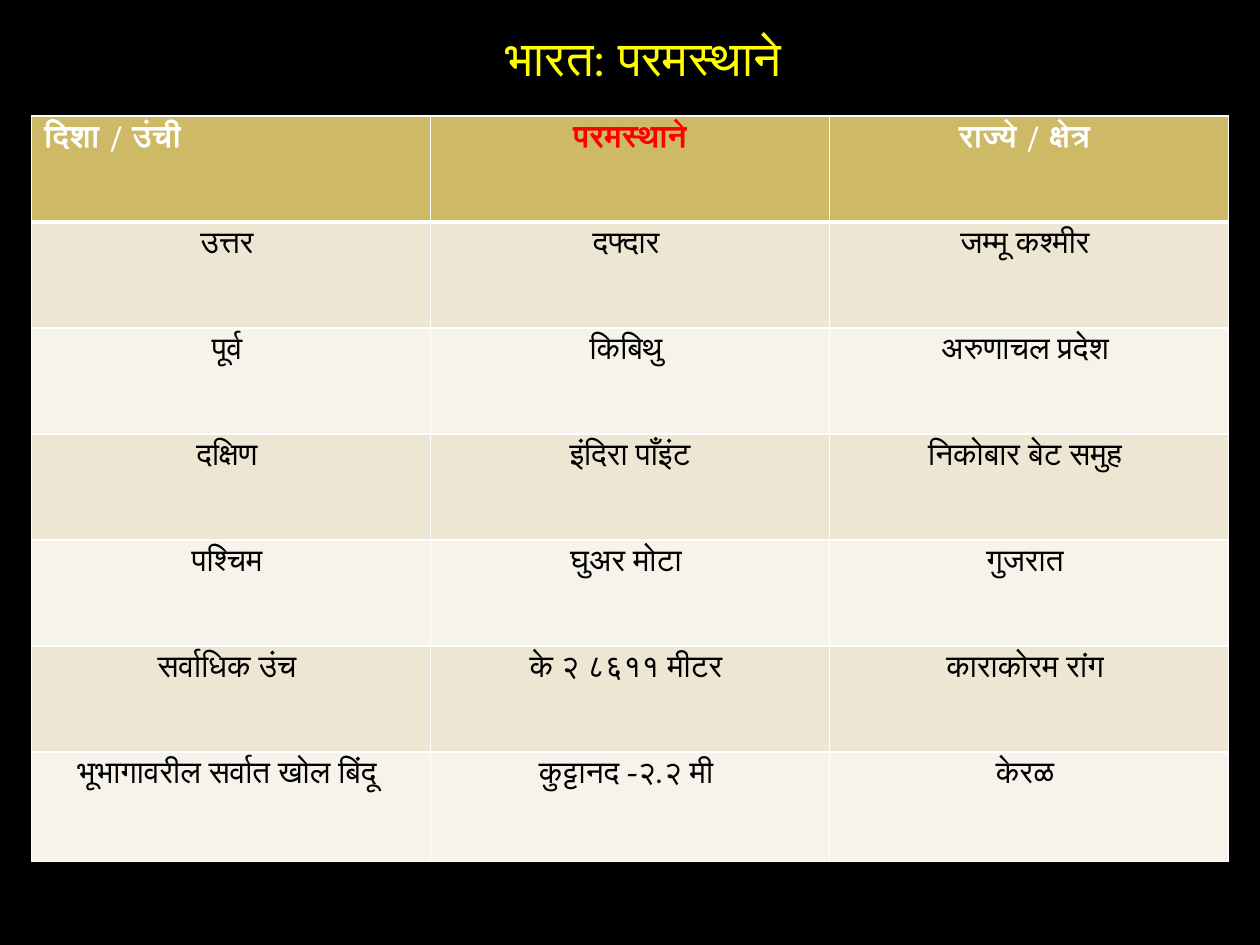
from lxml.etree import SubElement
from pptx import Presentation
from pptx.dml.color import RGBColor
from pptx.enum.text import PP_ALIGN
from pptx.oxml.ns import qn
from pptx.util import Pt

FONT = "TeX Gyre Pagella"
HEX = {
    "back": "000000", "title": "FFFF00", "head": "CEB966", "odd": "EDE6D3",
    "even": "F6F3EA", "white": "FFFFFF", "red": "FF0000", "text": "000000",
}
ROWS = [
    ["दिशा / उंची", "परमस्थाने", "राज्ये / क्षेत्र "],
    ["उत्तर ", "दफ्दार ", "जम्मू कश्मीर "],
    ["पूर्व ", "किबिथु ", "अरुणाचल प्रदेश "],
    ["दक्षिण ", "इंदिरा पाँइंट", "निकोबार बेट समुह "],
    ["पश्चिम ", "घुअर मोटा ", "गुजरात "],
    ["सर्वाधिक उंच ", "के २ ८६११ मीटर ", "काराकोरम रांग "],
    ["भूभागावरील सर्वात खोल बिंदू ", "कुट्टानद -२.२ मी ", "केरळ "],
]


def color(name):
    return RGBColor.from_string(HEX[name])


def write(frame, text, size, ink, bold=False, align=PP_ALIGN.CENTER):
    frame.text = text
    para = frame.paragraphs[0]
    para.alignment = align
    font = para.runs[0].font
    font.name, font.size, font.bold = FONT, Pt(size), bold
    font.color.rgb = color(ink)
    return para


def border(cell, top, bottom):
    props = cell._tc.get_or_add_tcPr()
    sides = [("L", 1), ("R", 1), ("T", top), ("B", bottom)]
    for place, (side, width) in enumerate(sides):
        line = SubElement(props, qn(f"a:ln{side}"), w=str(Pt(width)))
        fill = SubElement(line, qn("a:solidFill"))
        SubElement(fill, qn("a:srgbClr"), val=HEX["white"])
        props.insert(place, line)


def add_title(slide, text):
    box = slide.shapes.add_textbox(Pt(41.76), Pt(12.24), Pt(648), Pt(370.8))
    box.text_frame.word_wrap = True
    para = write(box.text_frame, text, 28, "title")
    # Hanging indent
    props = para._p.get_or_add_pPr()
    props.set("marL", str(Pt(43.2)))
    props.set("indent", str(Pt(-32.4)))


def add_grid(slide, rows):
    count, wide = len(rows), len(rows[0])
    frame = slide.shapes.add_table(
        count, wide, Pt(18), Pt(66.24), Pt(684), Pt(426.2))
    table = frame.table
    for row in table.rows:
        row.height = Pt(60.6)
    table.rows[count - 1].height = Pt(62.6)

    for r, row in enumerate(rows):
        head = r == 0
        shade = "head" if head else "odd" if r % 2 else "even"
        for c, text in enumerate(row):
            cell = table.cell(r, c)
            cell.fill.solid()
            cell.fill.fore_color.rgb = color(shade)
            # A thick rule parts the header from the body
            border(cell, 3 if r == 1 else 1, 3 if head else 1)
            ink = "text" if not head else "red" if c == 1 else "white"
            align = PP_ALIGN.LEFT if head and c == 0 else PP_ALIGN.CENTER
            write(cell.text_frame, text, 18, ink, head, align)


def main():
    deck = Presentation()
    deck.slide_width, deck.slide_height = Pt(720), Pt(540)
    slide = deck.slides.add_slide(deck.slide_layouts[6])

    # Background
    slide.background.fill.solid()
    slide.background.fill.fore_color.rgb = color("back")

    # Title and table
    add_title(slide, "भारत: परमस्थाने ")
    add_grid(slide, ROWS)
    deck.save("out.pptx")


if __name__ == "__main__":
    main()
